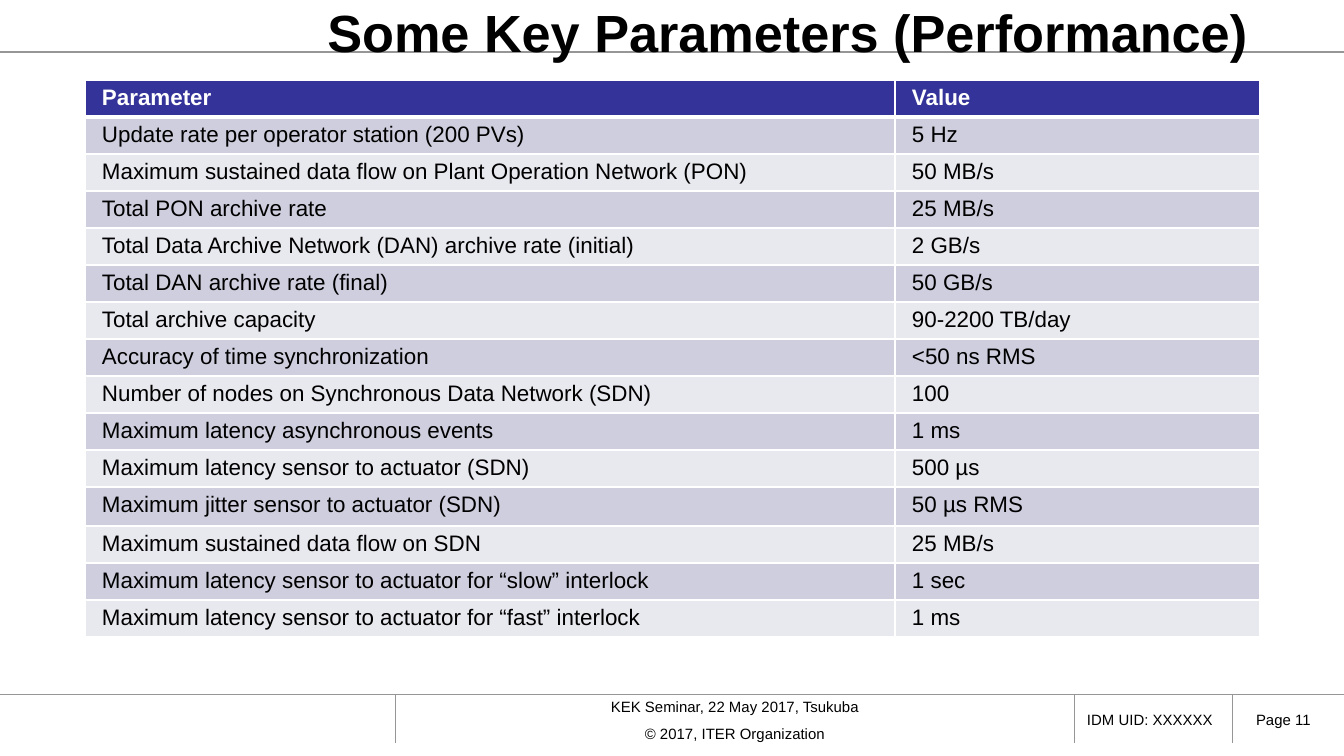
from lxml import etree
from pptx import Presentation
from pptx import util as u
from pptx.dml.color import RGBColor
from pptx.enum import shapes, text
from pptx.oxml.ns import qn

EMU_PER_PX = 914400 / 134.4

BLACK = RGBColor(0x00, 0x00, 0x00)
WHITE = RGBColor(0xFF, 0xFF, 0xFF)
RULE = RGBColor(0x96, 0x96, 0x96)
HEADER = RGBColor(0x33, 0x33, 0x99)
BANDS = [RGBColor(0xE8, 0xE8, 0xEF), RGBColor(0xCE, 0xCE, 0xDE)]

PARAMETERS = [
    ("Parameter", "Value"),
    ("Update rate per operator station (200 PVs)", "5 Hz"),
    ("Maximum sustained data flow on Plant Operation Network (PON)", "50 MB/s"),
    ("Total PON archive rate", "25 MB/s"),
    ("Total Data Archive Network (DAN) archive rate (initial)", "2 GB/s"),
    ("Total DAN archive rate (final)", "50 GB/s"),
    ("Total archive capacity", "90-2200 TB/day"),
    ("Accuracy of time synchronization", "<50 ns RMS"),
    ("Number of nodes on Synchronous Data Network (SDN)", "100"),
    ("Maximum latency asynchronous events", "1 ms"),
    ("Maximum latency sensor to actuator (SDN)", "500 µs"),
    ("Maximum jitter sensor to actuator (SDN)", "50 µs RMS"),
    ("Maximum sustained data flow on SDN", "25 MB/s"),
    ("Maximum latency sensor to actuator for “slow” interlock", "1 sec"),
    ("Maximum latency sensor to actuator for “fast” interlock", "1 ms"),
]
JITTER_ROW = 11


def px(n):
    return u.Emu(round(n * EMU_PER_PX))


def set_all(obj, values):
    for name, value in values.items():
        setattr(obj, name, value)


class SlideBuilder:
    font = "Arial"

    def __init__(self, slide):
        self.s = slide

    def fill_text(self, tf, lines, size, color=BLACK, bold=False,
                  align=text.PP_ALIGN.LEFT, gap=0):
        for i, line in enumerate(lines):
            p = tf.paragraphs[0] if i == 0 else tf.add_paragraph()
            p.alignment = align
            if i:
                p.space_before = u.Pt(gap)
            r = p.add_run()
            r.text = line
            set_all(r.font, {"name": self.font, "size": u.Pt(size), "bold": bold})
            r.font.color.rgb = color

    def textbox(self, x, y, w, h, lines, size, insets=(13, 7), **style):
        tf = self.s.shapes.add_textbox(px(x), px(y), px(w), px(h)).text_frame
        side, end = map(px, insets)
        set_all(tf, {"word_wrap": True, "vertical_anchor": text.MSO_ANCHOR.MIDDLE,
                     "margin_left": side, "margin_right": side,
                     "margin_top": end, "margin_bottom": end})
        self.fill_text(tf, lines, size, **style)

    def line(self, x1, y1, x2, y2, width):
        c = self.s.shapes.add_connector(
            shapes.MSO_CONNECTOR.STRAIGHT, px(x1), px(y1), px(x2), px(y2))
        c.line.color.rgb = RULE
        c.line.width = u.Pt(width)
        etree.SubElement(c._element.spPr, qn("a:effectLst"))

    def borders(self, cell, **widths):
        """Draw white borders; widths in points by side, 1 unless given."""
        tc_pr = cell._tc.get_or_add_tcPr()
        for side in "LRTB":
            ln = etree.SubElement(tc_pr, qn(f"a:ln{side}"),
                                  w=str(u.Pt(widths.get(side, 1))))
            fill = etree.SubElement(ln, qn("a:solidFill"))
            etree.SubElement(fill, qn("a:srgbClr"), val=str(WHITE))

    def table(self, x, y, col_widths, row_heights, rows, size):
        table = self.s.shapes.add_table(
            len(rows), len(col_widths), px(x), px(y),
            px(sum(col_widths)), px(sum(row_heights))).table
        for col, w in zip(table.columns, col_widths):
            col.width = px(w)
        for i, (row, h, values) in enumerate(zip(table.rows, row_heights, rows)):
            row.height = px(h)
            header = i == 0
            for cell, value in zip(row.cells, values):
                set_all(cell, {"margin_left": px(17), "margin_right": px(17),
                               "margin_top": px(5), "margin_bottom": px(5)})
                self.borders(cell, **({"B": 3} if header else {"T": 3} if i == 1 else {}))
                cell.fill.solid()
                cell.fill.fore_color.rgb = HEADER if header else BANDS[i % 2]
                self.fill_text(cell.text_frame, [value], size,
                               color=WHITE if header else BLACK, bold=header)


def main():
    prs = Presentation()
    prs.slide_width, prs.slide_height = px(1344), px(756)
    b = SlideBuilder(prs.slides.add_slide(prs.slide_layouts[6]))

    b.line(0, 52, 1344, 52, 1.25)
    b.textbox(396, 697, 678, 46,
              ["KEK Seminar, 22 May 2017, Tsukuba", "© 2017, ITER Organization"],
              8, insets=(5, 0), align=text.PP_ALIGN.CENTER, gap=4.7)
    b.textbox(1243, 704, 86, 32, ["Page 11"], 8)
    b.textbox(1074, 704, 164, 32, ["IDM UID: XXXXXX"], 8)
    b.line(0, 695, 1344, 695, 0.5)
    for x in (1232, 1074, 396):
        b.line(x, 695, x, 743, 0.5)

    b.textbox(85, 0, 1175, 63, ["Some Key Parameters (Performance)"], 28,
              bold=True, align=text.PP_ALIGN.RIGHT)
    heights = [39 if i == JITTER_ROW else 37 for i in range(len(PARAMETERS))]
    b.table(85, 80, [810, 365], heights, PARAMETERS, 12)

    prs.save("out.pptx")


if __name__ == "__main__":
    main()
